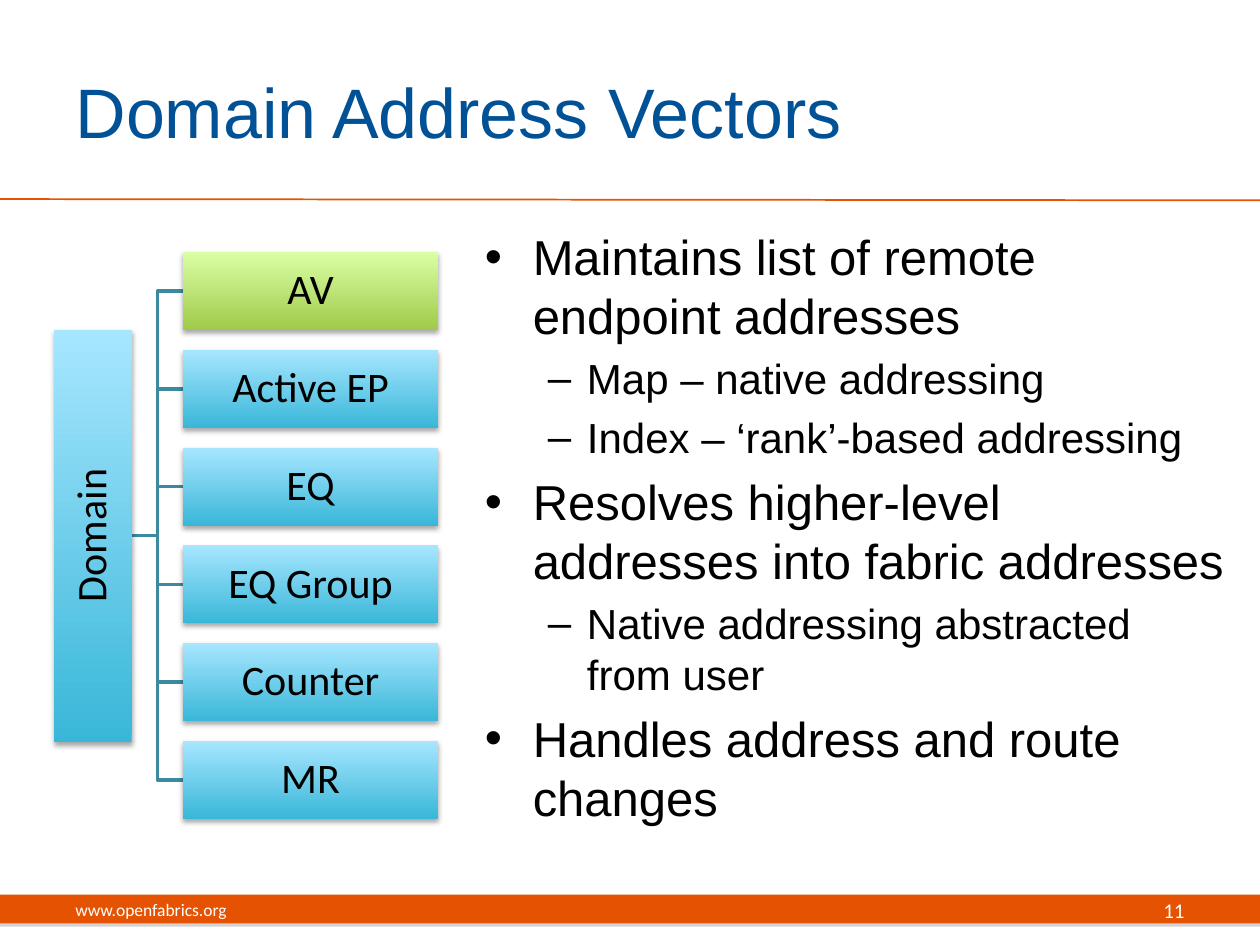
import dataclasses

import pptx
import pptx.dml.color
import pptx.enum.shapes
import pptx.enum.text
import pptx.oxml
import pptx.oxml.ns
import pptx.util

Inches = pptx.util.Inches
Pt = pptx.util.Pt
Align = pptx.enum.text.PP_ALIGN
Anchor = pptx.enum.text.MSO_ANCHOR
Rect = pptx.enum.shapes.MSO_SHAPE.RECTANGLE


@dataclasses.dataclass(frozen=True)
class Theme:
    head: str = "Arial"
    label: str = "Calibri"
    blue: str = "005195"
    orange: str = "E55302"
    black: str = "000000"
    white: str = "FFFFFF"
    gray: str = "808080"
    teal: str = "3C8A9F"
    cool: tuple = ("39B7D8", "A7E6FF")
    fresh: tuple = ("A0CA4A", "DAFFA5")
    title: int = 40
    levels: tuple = (28, 24)
    box: int = 24
    site: int = 10
    page: int = 12


def rgb(code):
    return pptx.dml.color.RGBColor.from_string(code)


def add_xml(parent, tag, inner="", **attrs):
    pairs = " ".join(f'{key}="{value}"' for key, value in attrs.items())
    space = pptx.oxml.ns.nsdecls("a")
    parent.append(pptx.oxml.parse_xml(
        f"<a:{tag} {space} {pairs}>{inner}</a:{tag}>"))


class Deck:
    def __init__(self, theme):
        self.theme = theme
        self.file = pptx.Presentation()
        self.file.slide_width = Inches(10)
        self.file.slide_height = Inches(7.5)
        self.slide = self.file.slides.add_slide(self.file.slide_layouts[5])
        self.shapes = self.slide.shapes

    def style(self, para, size, font, color):
        for run in para.runs:
            run.font.size = Pt(size)
            run.font.name = font
            run.font.color.rgb = rgb(color)

    def title(self, text, left, top, width, height):
        shape = self.shapes.title
        shape.left, shape.top = Inches(left), Inches(top)
        shape.width, shape.height = Inches(width), Inches(height)
        frame = shape.text_frame
        frame.text = text
        frame.vertical_anchor = Anchor.MIDDLE
        frame.paragraphs[0].alignment = Align.LEFT
        self.style(frame.paragraphs[0], self.theme.title,
                   self.theme.head, self.theme.blue)

    def shade(self, shape, color, blur):
        """Give the shape a soft shadow that falls straight down."""
        shape.shadow.inherit = False
        effects = shape._element.spPr.find(pptx.oxml.ns.qn("a:effectLst"))
        add_xml(effects, "outerShdw",
                f'<a:srgbClr val="{color}"><a:alpha val="35000"/></a:srgbClr>',
                blurRad=Pt(blur), dist=Pt(1.8), dir=5400000, rotWithShape=0)

    def rect(self, left, top, width, height):
        shape = self.shapes.add_shape(Rect, Inches(left), Inches(top),
                                      Inches(width), Inches(height))
        shape.line.fill.background()
        return shape

    def bar(self, left, top, width, height):
        shape = self.rect(left, top, width, height)
        shape.fill.solid()
        shape.fill.fore_color.rgb = rgb(self.theme.orange)
        self.shade(shape, self.theme.gray, 0)

    def rule(self, start, end):
        line = self.shapes.add_connector(
            pptx.enum.shapes.MSO_CONNECTOR.STRAIGHT,
            *map(Inches, start + end))
        line.line.color.rgb = rgb(self.theme.orange)
        line.line.width = Pt(1)
        add_xml(line._element.spPr, "effectLst")

    def elbow(self, start, end):
        mid = (start[0] + end[0]) / 2
        draft = self.shapes.build_freeform(*map(Inches, start))
        points = [(mid, start[1]), (mid, end[1]), end]
        draft.add_line_segments(
            [(Inches(x), Inches(y)) for x, y in points], close=False)
        shape = draft.convert_to_shape()
        shape.fill.background()
        shape.line.color.rgb = rgb(self.theme.teal)
        shape.line.width = Pt(2)
        shape.shadow.inherit = False

    def box(self, text, left, top, width, height, colors, turn=0):
        """Draw a labelled box, dark at the foot even when turned."""
        shape = self.rect(left, top, width, height)
        shape.rotation = turn
        shape.fill.gradient()
        shape.fill.gradient_angle = 90
        for stop, color in zip(shape.fill.gradient_stops, colors):
            stop.color.rgb = rgb(color)
        fill = shape._element.spPr.find(pptx.oxml.ns.qn("a:gradFill"))
        fill.set("rotWithShape", "0")
        self.shade(shape, self.theme.black, 3.1)
        frame = shape.text_frame
        frame.margin_left = frame.margin_right = Inches(0.02)
        frame.margin_top = frame.margin_bottom = Inches(0.02)
        frame.vertical_anchor = Anchor.MIDDLE
        frame.text = text
        para = frame.paragraphs[0]
        para.alignment = Align.CENTER
        para.line_spacing = 0.9
        self.style(para, self.theme.box, self.theme.label, self.theme.black)

    def frame(self, left, top, width, height):
        area = self.shapes.add_textbox(Inches(left), Inches(top),
                                       Inches(width), Inches(height))
        area.text_frame.word_wrap = True
        return area.text_frame

    def note(self, text, left, top, width, height, size, align):
        frame = self.frame(left, top, width, height)
        frame.vertical_anchor = Anchor.MIDDLE
        frame.text = text
        frame.paragraphs[0].alignment = align
        self.style(frame.paragraphs[0], size,
                   self.theme.label, self.theme.white)

    def bullets(self, items, left, top, width, height):
        frame = self.frame(left, top, width, height)
        frame.text = "\n".join(text for level, text in items)
        marks = (("•", 0.38, 0.38), ("–", 0.81, 0.31))
        for i, (para, item) in enumerate(zip(frame.paragraphs, items)):
            level = item[0]
            mark, indent, hang = marks[level]
            para.level = level
            props = para._p.get_or_add_pPr()
            props.set("marL", str(Inches(indent)))
            props.set("indent", str(-Inches(hang)))
            add_xml(props, "buFont", typeface=self.theme.head)
            add_xml(props, "buChar", char=mark)
            size = self.theme.levels[level]
            if i:
                para.space_before = Pt(0.2 * size)
            self.style(para, size, self.theme.head, self.theme.black)


def main():
    theme = Theme()
    deck = Deck(theme)
    deck.bar(0, 7.1, 10, 0.23)
    deck.rule((0, 1.58), (10, 1.59))
    deck.title("Domain Address Vectors", 0.5, 0.25, 8.17, 1.25)
    deck.bullets([
        (0, "Maintains list of remote endpoint addresses"),
        (1, "Map – native addressing"),
        (1, "Index – ‘rank’-based addressing"),
        (0, "Resolves higher-level addresses into fabric addresses"),
        (1, "Native addressing abstracted from user"),
        (0, "Handles address and route changes"),
    ], 3.75, 1.75, 6.08, 4.95)
    deck.note("www.openfabrics.org", 0.5, 7.02, 3.17, 0.4,
              theme.site, Align.LEFT)
    deck.note("11", 7.17, 7.02, 2.33, 0.4, theme.page, Align.RIGHT)

    parts = ["AV", "Active EP", "EQ", "EQ Group", "Counter", "MR"]
    left, top, step, tall = 1.45, 2, 0.776, 0.62
    root = (1.05, 4.25)
    tops = [top + i * step for i in range(len(parts))]
    for y in tops:
        deck.elbow(root, (left, y + tall / 2))
    deck.box("Domain", -0.9, 3.94, 3.27, tall, theme.cool, turn=270)
    for name, y in zip(parts, tops):
        colors = theme.fresh if name == "AV" else theme.cool
        deck.box(name, left, y, 2.03, tall, colors)
    deck.file.save("out.pptx")


if __name__ == "__main__":
    main()
